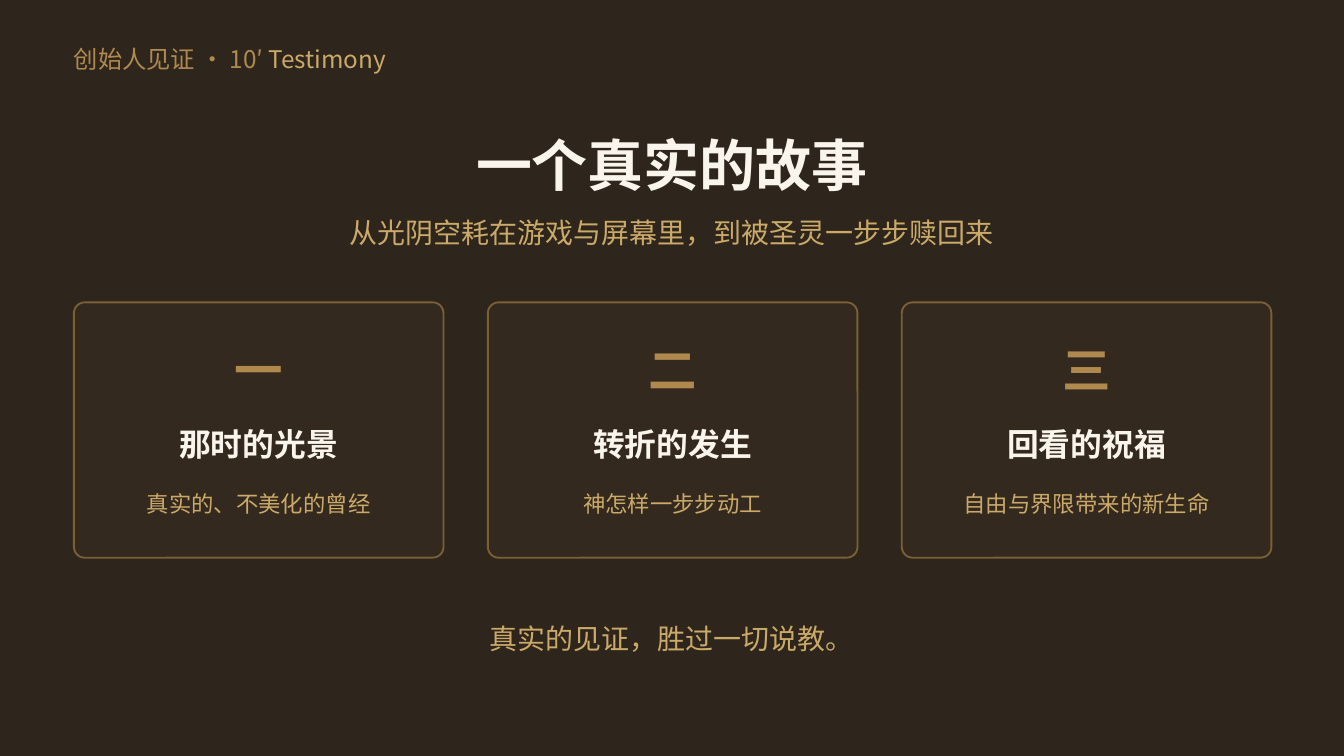
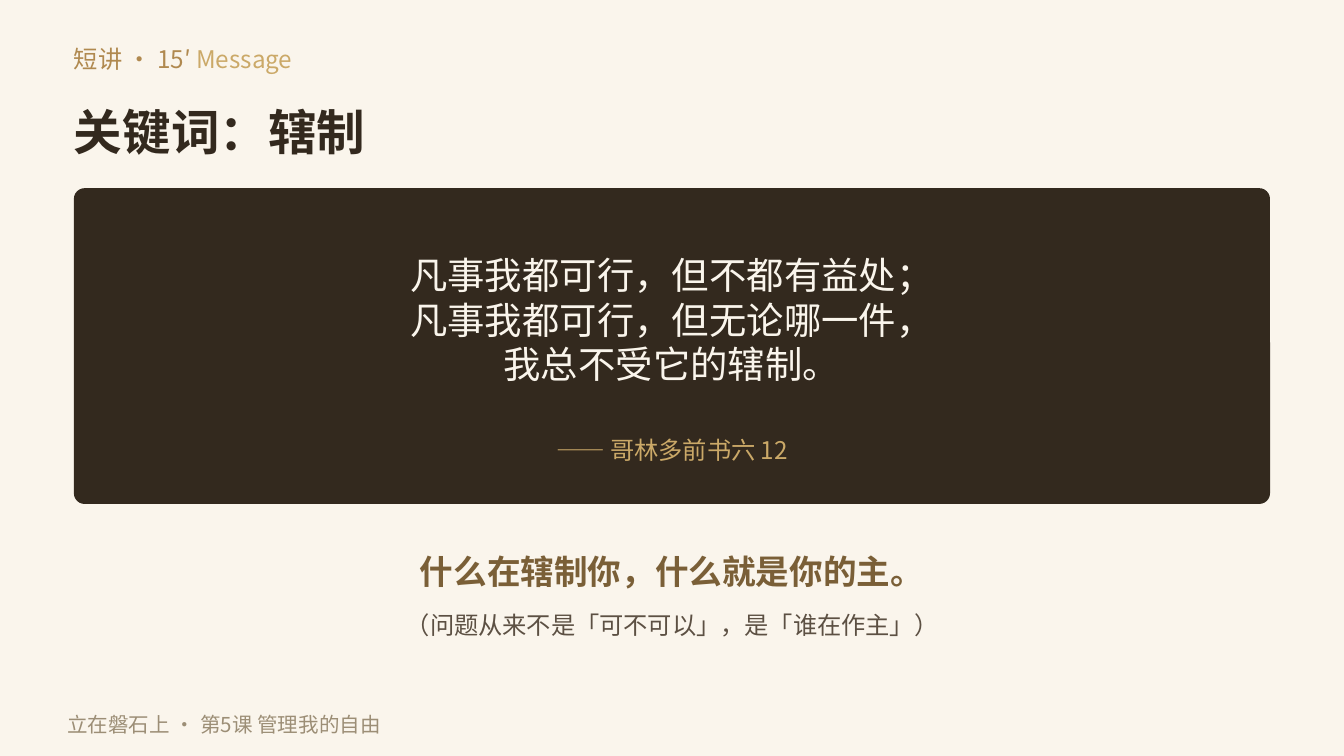
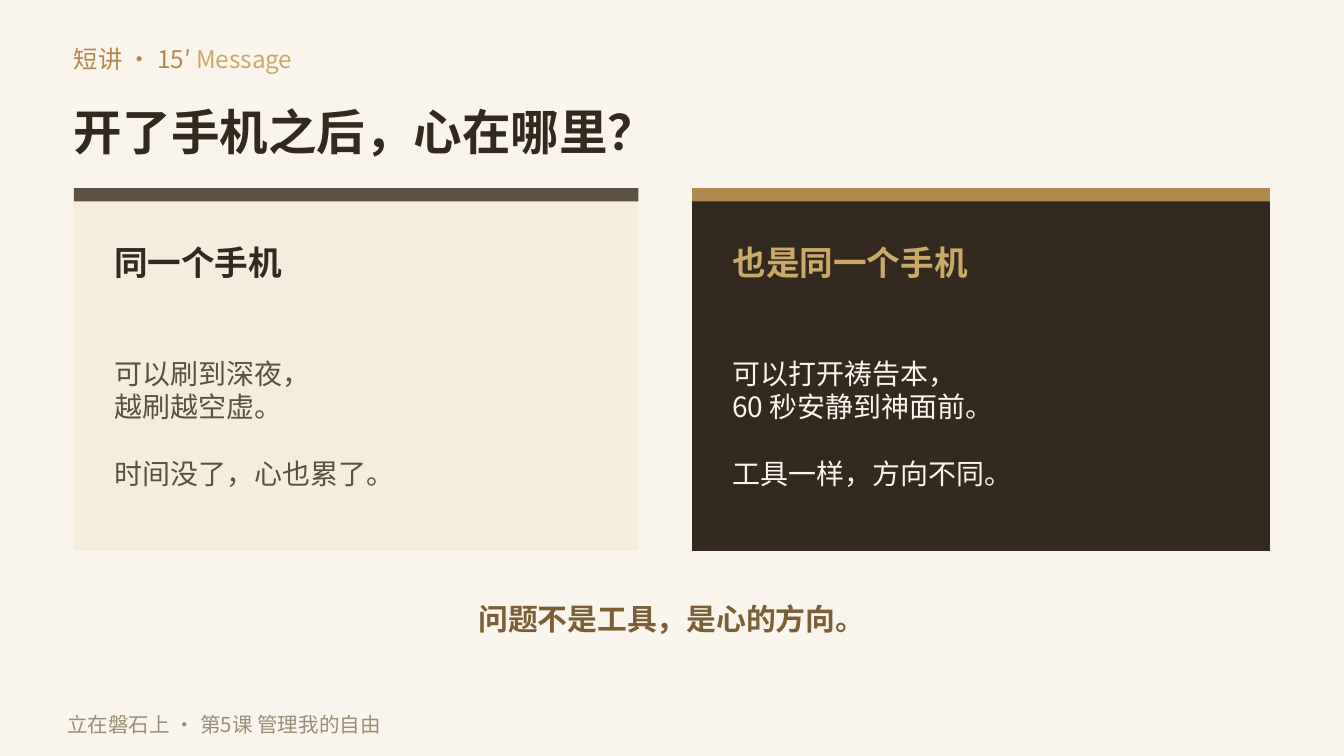
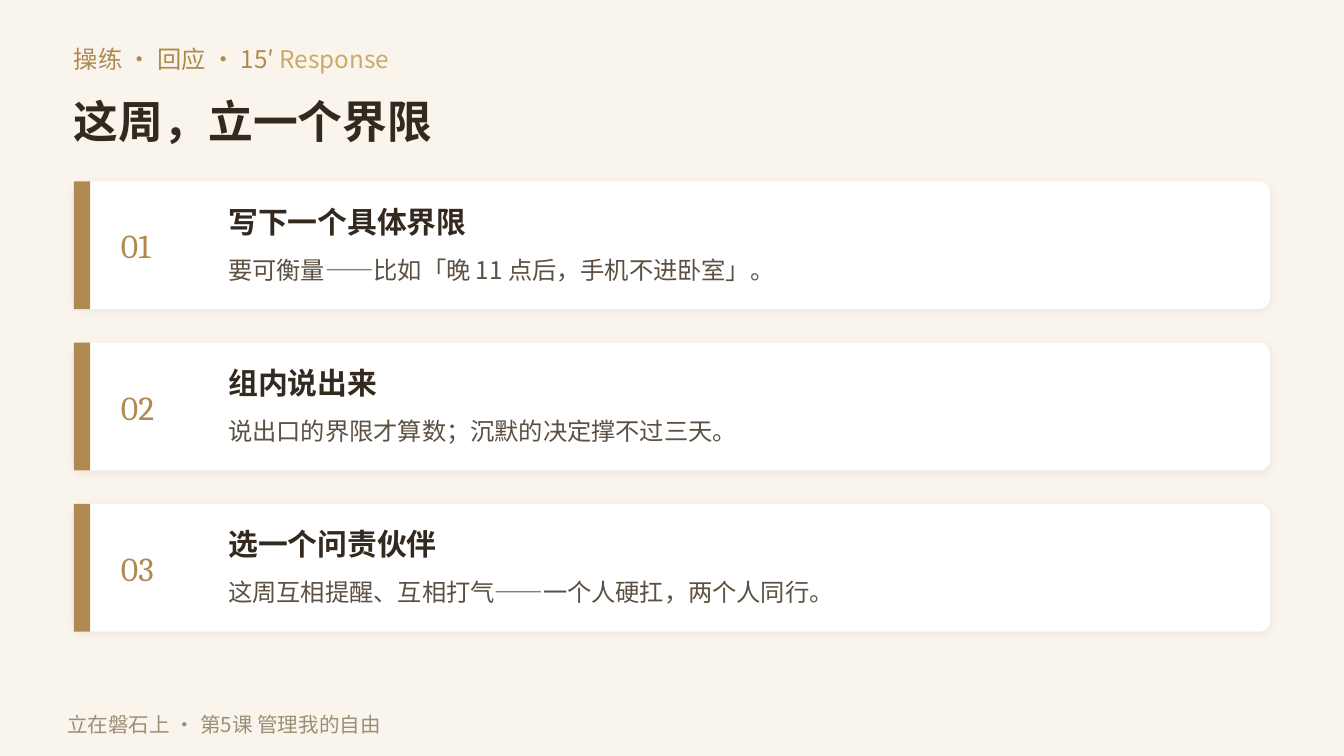
from dataclasses import dataclass, replace
from typing import NamedTuple

from lxml.etree import SubElement
from pptx import Presentation
from pptx.dml.color import RGBColor as RGB
from pptx.enum.shapes import MSO_SHAPE as SHAPE
from pptx.enum.text import MSO_ANCHOR as ANCHOR
from pptx.enum.text import MSO_AUTO_SIZE as AUTO
from pptx.enum.text import PP_ALIGN as ALIGN
from pptx.oxml.ns import qn
from pptx.util import Emu, Pt

EMU_PER_PX = 4572  # 200 px to the inch
W, H = 2000, 1125
LEFT, WIDE = 110, 1780
RADIUS = 16
BODY_LAYOUT, TWO_BODY_LAYOUT, TITLE_LAYOUT = 1, 3, 5


@dataclass(frozen=True)
class Theme:
    night: str = "2E261C"
    brown: str = "33291E"
    umber: str = "5C5043"
    bronze: str = "7A5F37"
    gold: str = "B0894F"
    sand: str = "CBA968"
    taupe: str = "9C8E76"
    cream: str = "FAF5EC"
    linen: str = "F4ECDD"
    white: str = "FFFFFF"
    sans: str = "Noto Sans CJK SC"
    serif: str = "Cambria"
    hero: int = 30
    title: int = 26
    title_small: int = 24
    verse: int = 20
    heading: int = 18
    card: int = 17
    item: int = 16
    body: int = 15
    small: int = 13
    caption: int = 12
    footer: int = 11


T = Theme()


class Box(NamedTuple):
    x: int
    y: int
    w: int
    h: int

    def emu(self) -> list[Emu]:
        return [Emu(v * EMU_PER_PX) for v in self]


@dataclass(frozen=True)
class Style:
    size: int
    color: str
    bold: bool = False
    align: ALIGN = ALIGN.LEFT
    font: str = T.sans


class Card(NamedTuple):
    mark: str
    heading: str
    detail: str


class Panel(NamedTuple):
    x: int
    w: int
    fill: str
    band: str
    heading: str
    heading_color: str
    lines: list[str]
    color: str


TITLE = Style(T.title, T.brown, bold=True)
EYEBROW = Style(T.small, T.gold)
NOTE = Style(T.body, T.sand, align=ALIGN.CENTER)
MOTTO = Style(T.heading, T.bronze, True, ALIGN.CENTER)
FRAME = dict(margin_left=0, margin_top=0, margin_right=0, margin_bottom=0,
             word_wrap=True, auto_size=AUTO.NONE, vertical_anchor=ANCHOR.MIDDLE)


def set_attrs(obj, values: dict) -> None:
    for name, value in values.items():
        setattr(obj, name, value)


def add_run(p, text: str, style: Style) -> None:
    r = p.add_run()
    r.text = text
    set_attrs(r.font, dict(size=Pt(style.size), bold=style.bold, name=style.font))
    r.font.color.rgb = RGB.from_string(style.color)
    SubElement(r._r.get_or_add_rPr(), qn("a:ea"), typeface=style.font)


def write(sp, lines: list[str], style: Style) -> list:
    """Put one paragraph per line into the shape and return the paragraphs."""
    tf = sp.text_frame
    set_attrs(tf, FRAME)
    paragraphs = []
    for i, line in enumerate(lines):
        p = tf.add_paragraph() if i else tf.paragraphs[0]
        if sp.is_placeholder:
            pPr = p._p.get_or_add_pPr()
            pPr.set("marL", "0")
            pPr.set("indent", "0")
            SubElement(pPr, qn("a:buNone"))
            p.space_before = Pt(0)
        p.alignment = style.align
        add_run(p, line, style)
        paragraphs.append(p)
    return paragraphs


def add_text(s, box: Box, text: str, style: Style) -> list:
    return write(s.shapes.add_textbox(*box.emu()), [text], style)


def fill_placeholder(s, idx: int, box: Box, lines: list[str], style: Style) -> list:
    """Move a placeholder to the box, above the shapes drawn so far, and fill it."""
    sp = s.placeholders[idx]
    set_attrs(sp, dict(zip(("left", "top", "width", "height"), box.emu())))
    s.shapes.element.append(sp.element)
    return write(sp, lines, style)


def add_block(s, box: Box, fill: str, line: str = "", rounded: bool = False):
    kind = SHAPE.ROUNDED_RECTANGLE if rounded else SHAPE.RECTANGLE
    sp = s.shapes.add_shape(kind, *box.emu())
    sp.shadow.inherit = False
    sp.fill.solid()
    sp.fill.fore_color.rgb = RGB.from_string(fill)
    if line:
        sp.line.color.rgb = RGB.from_string(line)
        sp.line.width = Pt(1)
    else:
        sp.line.fill.background()
    if rounded:
        sp.adjustments[0] = RADIUS / min(box.w, box.h)
    return sp


def add_soft_shadow(sp) -> None:
    effects = sp.element.spPr.find(qn("a:effectLst"))
    shadow = SubElement(effects, qn("a:outerShdw"), blurRad=str(Pt(4)),
                        dist=str(Pt(1)), dir=str(135 * 60000),
                        algn="bl", rotWithShape="0")
    color = SubElement(shadow, qn("a:srgbClr"), val="000000")
    SubElement(color, qn("a:alpha"), val="6000")


def new_slide(prs, layout: int, section: str, english: str, back: str = T.cream):
    s = prs.slides.add_slide(prs.slide_layouts[layout])
    s.background.fill.solid()
    s.background.fill.fore_color.rgb = RGB.from_string(back)
    p, = add_text(s, Box(LEFT, 56, 1700, 64), section + " ", EYEBROW)
    add_run(p, english, replace(EYEBROW, color=T.sand))
    return s


def add_footer(s) -> None:
    add_text(s, Box(100, 1050, 1500, 56), "立在磐石上 · 第5课 管理我的自由",
             Style(T.footer, T.taupe))


def build_story(prs) -> None:
    s = new_slide(prs, TITLE_LAYOUT, "创始人见证 · 10′", "Testimony", T.night)
    fill_placeholder(s, 0, Box(100, 190, 1800, 110), ["一个真实的故事"],
                     Style(T.hero, T.cream, True, ALIGN.CENTER))
    add_text(s, Box(100, 310, 1800, 70),
             "从光阴空耗在游戏与屏幕里，到被圣灵一步步赎回来", NOTE)
    cards = [
        Card("一", "那时的光景", "真实的、不美化的曾经"),
        Card("二", "转折的发生", "神怎样一步步动工"),
        Card("三", "回看的祝福", "自由与界限带来的新生命"),
    ]
    w, gap, inset = 550, 66, 30
    for i, card in enumerate(cards):
        x = LEFT + i * (w + gap)
        add_block(s, Box(x, 450, w, 380), T.brown, T.bronze, rounded=True)
        add_text(s, Box(x, 500, w, 100), card.mark,
                 Style(T.title, T.gold, True, ALIGN.CENTER))
        add_text(s, Box(x + inset, 620, w - 2 * inset, 80), card.heading,
                 Style(T.card, T.cream, True, ALIGN.CENTER))
        add_text(s, Box(x + inset, 710, w - 2 * inset, 80), card.detail,
                 replace(NOTE, size=T.caption))
    add_text(s, Box(100, 910, 1800, 80), "真实的见证，胜过一切说教。", NOTE)


def build_keyword(prs) -> None:
    s = new_slide(prs, BODY_LAYOUT, "短讲 · 15′", "Message")
    fill_placeholder(s, 0, Box(LEFT, 150, 1800, 90), ["关键词：辖制"], TITLE)
    add_block(s, Box(LEFT, 280, WIDE, 470), T.brown, rounded=True)
    fill_placeholder(s, 1, Box(190, 340, 1620, 270), [
        "凡事我都可行，但不都有益处；",
        "凡事我都可行，但无论哪一件，",
        "我总不受它的辖制。",
    ], Style(T.verse, T.cream, align=ALIGN.CENTER))
    add_text(s, Box(190, 640, 1620, 60), "—— 哥林多前书六 12",
             replace(NOTE, size=T.small))
    add_text(s, Box(LEFT, 810, WIDE, 80), "什么在辖制你，什么就是你的主。", MOTTO)
    add_text(s, Box(LEFT, 900, WIDE, 60),
             "（问题从来不是「可不可以」，是「谁在作主」）",
             Style(T.small, T.umber, align=ALIGN.CENTER))
    add_footer(s)


def build_contrast(prs) -> None:
    s = new_slide(prs, TWO_BODY_LAYOUT, "短讲 · 15′", "Message")
    fill_placeholder(s, 0, Box(LEFT, 150, 1800, 90), ["开了手机之后，心在哪里？"], TITLE)
    panels = [
        Panel(LEFT, 840, T.linen, T.umber, "同一个手机", T.brown,
              ["可以刷到深夜，", "越刷越空虚。", "时间没了，心也累了。"], T.umber),
        Panel(1030, 860, T.brown, T.gold, "也是同一个手机", T.sand,
              ["可以打开祷告本，", "60 秒安静到神面前。", "工具一样，方向不同。"], T.cream),
    ]
    inset = 60
    for idx, panel in enumerate(panels, start=1):
        x, w = panel.x + inset, panel.w - 2 * inset
        add_block(s, Box(panel.x, 280, panel.w, 540), panel.fill)
        add_block(s, Box(panel.x, 280, panel.w, 20), panel.band)
        add_text(s, Box(x, 350, w, 80), panel.heading,
                 Style(T.heading, panel.heading_color, bold=True))
        paragraphs = fill_placeholder(s, idx, Box(x, 470, w, 320), panel.lines,
                                      Style(T.body, panel.color))
        paragraphs[-1].space_before = Pt(18)
    add_text(s, Box(LEFT, 880, WIDE, 80), "问题不是工具，是心的方向。",
             replace(MOTTO, size=T.item))
    add_footer(s)


def build_response(prs) -> None:
    s = new_slide(prs, TITLE_LAYOUT, "操练 · 回应 · 15′", "Response")
    fill_placeholder(s, 0, Box(LEFT, 140, 1800, 80), ["这周，立一个界限"],
                     replace(TITLE, size=T.title_small))
    steps = [
        Card("01", "写下一个具体界限", "要可衡量——比如「晚 11 点后，手机不进卧室」。"),
        Card("02", "组内说出来", "说出口的界限才算数；沉默的决定撑不过三天。"),
        Card("03", "选一个问责伙伴", "这周互相提醒、互相打气——一个人硬扛，两个人同行。"),
    ]
    h, gap = 190, 50
    for i, step in enumerate(steps):
        y = 270 + i * (h + gap)
        add_soft_shadow(add_block(s, Box(LEFT, y, WIDE, h), T.white, rounded=True))
        add_block(s, Box(LEFT, y, 24, h), T.gold)
        add_text(s, Box(180, y + 30, 140, 130), step.mark,
                 Style(T.heading, T.gold, font=T.serif))
        add_text(s, Box(340, y + 24, 1460, 70), step.heading,
                 replace(TITLE, size=T.item))
        add_text(s, Box(340, y + 96, 1460, 70), step.detail,
                 Style(T.small, T.umber))
    add_footer(s)


def main() -> None:
    prs = Presentation()
    prs.slide_width, prs.slide_height = Emu(W * EMU_PER_PX), Emu(H * EMU_PER_PX)
    for build in (build_story, build_keyword, build_contrast, build_response):
        build(prs)
    prs.save("out.pptx")


if __name__ == "__main__":
    main()
